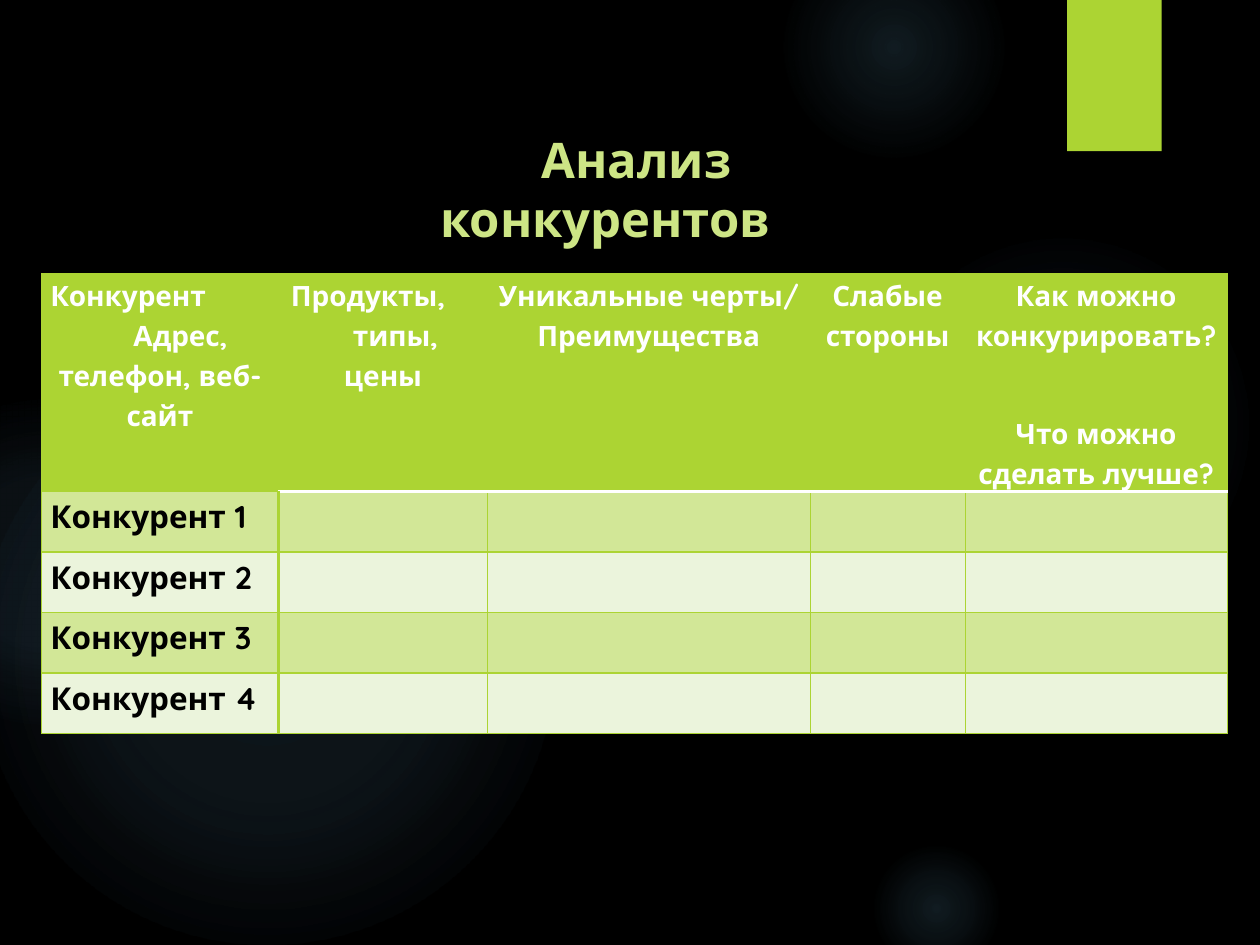
"""Build the competitor analysis slide with a five-column table."""
from lxml import etree
from pptx import Presentation, util as u
from pptx.dml.color import RGBColor
from pptx.enum import shapes, text
from pptx.oxml import parse_xml
from pptx.oxml.ns import nsdecls, qn

LIME, WHITE, BLACK, GLOW = "ACD433", "FFFFFF", "000000", "7AC4F0"
LEFT, CENTER, JUSTIFY = text.PP_ALIGN.LEFT, text.PP_ALIGN.CENTER, text.PP_ALIGN.JUSTIFY


def paint(fill, color):
    fill.solid()
    fill.fore_color.rgb = RGBColor.from_string(color)


def write(para, words, size=16, color=WHITE, align=CENTER, margin=0, indent=0, spacing=None, after=0):
    para.alignment = align
    para.line_spacing = spacing
    para.space_after = u.Pt(after)
    props = para._p.get_or_add_pPr()
    props.set("marL", str(u.Inches(margin)))
    props.set("indent", str(u.Inches(indent)))
    span = para.add_run()
    span.text = words
    span.font.name, span.font.size, span.font.bold = "Quicksand", u.Pt(size), True
    paint(span.font.fill, color)


deck = Presentation()
deck.slide_width, deck.slide_height = u.Inches(10), u.Inches(7.5)
page = deck.slides.add_slide(deck.slide_layouts[6])
paint(page.background.fill, BLACK)

glows = [
    (6.89, 1.83, 3.08, [(0, 7), (36, 6), (69, 0)]),
    (6.22, -0.5, 1.75, [(0, 14), (36, 7), (73, 0)]),
    (6.89, 6.67, 1.08, [(0, 14), (36, 7), (66, 0)]),
    (-0.17, 2.92, 4.58, [(0, 11), (36, 10), (75, 0)]),
    (-0.92, 3.17, 2.58, [(0, 8), (36, 8), (72, 0)]),
]
for left, top, size, stops in glows:
    circle = page.shapes.add_shape(shapes.MSO_SHAPE.OVAL, *map(u.Inches, (left, top, size, size)))
    circle.shadow.inherit = False
    circle.line.fill.background()
    marks = "".join(
        f'<a:gs pos="{place * 1000}"><a:srgbClr val="{GLOW}"><a:alpha val="{alpha * 1000}"/></a:srgbClr></a:gs>'
        for place, alpha in stops)
    circle._element.spPr.find(qn("a:prstGeom")).addnext(parse_xml(
        f'<a:gradFill {nsdecls("a")} rotWithShape="1"><a:gsLst>{marks}</a:gsLst><a:path path="circle">'
        '<a:fillToRect l="50000" t="50000" r="50000" b="50000"/></a:path></a:gradFill>'))

ribbon = page.shapes.add_shape(shapes.MSO_SHAPE.RECTANGLE, *map(u.Inches, (8.47, 0, 0.75, 1.2)))
ribbon.shadow.inherit = False
ribbon.line.fill.background()
paint(ribbon.fill, LIME)

widths = [1.88, 1.66, 2.56, 1.23, 2.08]
heights = [1.67] + [0.48] * 4
headers = [
    [("Конкурент", LEFT, 0, 0), ("Адрес,", LEFT, 0.66, 0), ("телефон, веб-сайт", CENTER, 0, 10)],
    [("Продукты,", LEFT, 0.03, 0), ("типы,", LEFT, 0.52, 0), ("цены", CENTER, 0, 10)],
    [("Уникальные черты/ Преимущества", CENTER, 0, 10)],
    [("Слабые стороны", CENTER, 0, 10)],
    [("Как можно конкурировать?", CENTER, 0, 33), ("Что можно сделать лучше?", CENTER, 0, 10)],
]
frame = page.shapes.add_table(len(heights), len(widths), *map(u.Inches, (0.33, 2.17, sum(widths), sum(heights))))
table = frame.table
for column, width in zip(table.columns, widths):
    column.width = u.Inches(width)
for row, height in zip(table.rows, heights):
    row.height = u.Inches(height)

for y in range(len(heights)):
    for x in range(len(widths)):
        cell = table.cell(y, x)
        cell.margin_left = cell.margin_right = u.Inches(0.07)
        cell.margin_top = cell.margin_bottom = 0
        paint(cell.fill, LIME if y == 0 else "D2E797" if y % 2 else "EBF4DC")
        if y == 0:
            for number, (words, align, margin, after) in enumerate(headers[x]):
                para = cell.text_frame.add_paragraph() if number else cell.text_frame.paragraphs[0]
                write(para, words, align=align, margin=margin, spacing=1.15, after=after)
        elif x == 0:
            write(cell.text_frame.paragraphs[0], f"Конкурент {y}", size=18, color=BLACK,
                  align=JUSTIFY, spacing=1.15, after=10)
        divider = (WHITE, 1.5) if x else (LIME, 0.75)
        edges = {
            "lnL": (LIME, 1.5 if x == 1 and y else 0.75),
            "lnR": (LIME, 1.5 if x == 0 and y else 0.75),
            "lnT": divider if y == 1 else (LIME, 0.75),
            "lnB": divider if y == 0 else (LIME, 0.75),
        }
        for place, (name, (color, weight)) in enumerate(edges.items()):
            edge = etree.Element(qn(f"a:{name}"), w=str(u.Pt(weight)))
            solid = etree.SubElement(edge, qn("a:solidFill"))
            etree.SubElement(solid, qn("a:srgbClr"), val=color)
            cell._tc.get_or_add_tcPr().insert(place, edge)

title = page.shapes.add_textbox(*map(u.Inches, (2.42, 1.21, 4.77, 0.57))).text_frame
title.word_wrap = True
title.vertical_anchor = text.MSO_ANCHOR.MIDDLE
write(title.paragraphs[0], "Анализ конкурентов", size=28, color="CDE585", indent=0.49)

deck.save("out.pptx")
